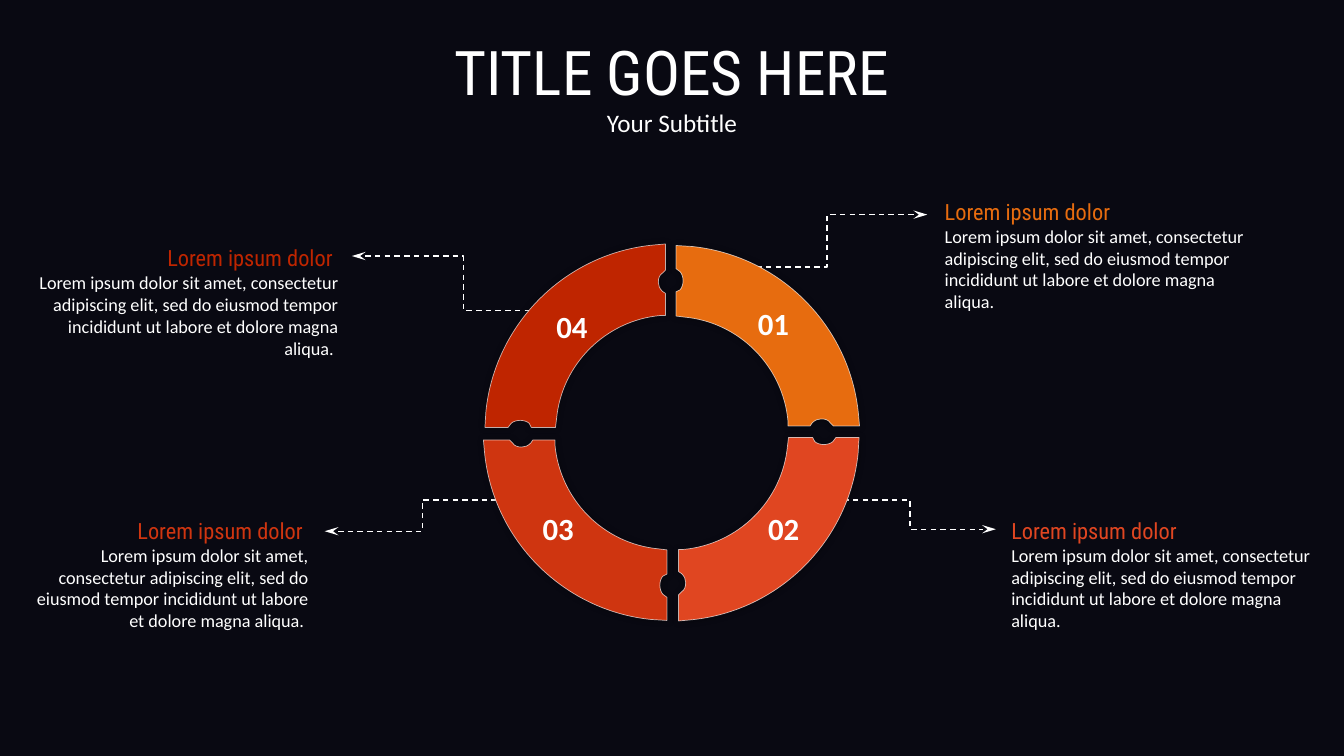
from dataclasses import dataclass

from lxml.etree import SubElement
from pptx import Presentation
from pptx.dml.color import RGBColor
from pptx.enum.dml import MSO_LINE
from pptx.enum.shapes import MSO_CONNECTOR, MSO_SHAPE
from pptx.enum.text import MSO_AUTO_SIZE, PP_ALIGN
from pptx.oxml.ns import qn
from pptx.util import Emu, Inches, Pt

Point = tuple[float, float]
Box = tuple[float, float, float, float]

WIDE, HIGH = Inches(13.33), Inches(7.5)
HEAD_FONT, BODY_FONT = "Roboto Condensed", "Calibri"
HUES = {
    "back": "20213D", "veil": "000000", "text": "FFFFFF",
    "amber": "E76C0F", "coral": "E04621", "rust": "CF3510", "brick": "BF2500",
}
HEAD = "Lorem ipsum dolor"
BODY = ("Lorem ipsum dolor sit amet, consectetur adipiscing elit, "
        "sed do eiusmod tempor incididunt ut labore et dolore magna aliqua.")

# Ring quarter in hundredths of an inch: two values make a line, six a curve.
START = (179, 0)
EDGE = [
    (179, 26), (176, 29), (173, 31, 172, 34, 172, 38), (172, 41, 173, 44, 176, 47),
    (179, 49), (179, 71), (174, 71), (120, 76, 76, 119, 71, 174),
    (70, 182), (46, 182), (44, 178), (42, 176, 38, 175, 35, 175),
    (32, 175, 28, 176, 26, 178), (23, 182), (0, 182), (1, 166),
    (10, 79, 80, 9, 168, 1),
]


@dataclass
class Part:
    """One ring quarter with its note; places are percent of the slide."""
    label: str
    hue: str
    turn: int
    spot: Point
    mark: Point
    note: Box
    link: Box
    left: bool


@dataclass
class Run:
    text: str
    size: float
    font: str
    hue: str = "text"
    bold: bool = False


PARTS = [
    Part("01", "amber", 90, (50.41, 32.27), (55.66, 39.6),
         (69.77, 25.8, 24.68, 16.13), (54.09, 35.33, 69, 28.4), False),
    Part("02", "coral", 180, (50.49, 57.87), (56.41, 66.8),
         (74.72, 68, 24.68, 16.13), (61.29, 66.13, 74.1, 70), False),
    Part("03", "rust", 270, (36.08, 58), (39.64, 66.72),
         (1.16, 68, 22.28, 16.13), (24.16, 70.27, 38.71, 66.13), True),
    Part("04", "brick", 0, (36.08, 32.27), (40.66, 40),
         (0.83, 31.92, 24.83, 16.13), (26.18, 33.87, 42.76, 41.07), True),
]


def tint(name: str) -> RGBColor:
    return RGBColor.from_string(HUES[name])


def place(box: tuple[float, ...]) -> list[Emu]:
    """Turn x, y pairs in percent of the slide into lengths."""
    return [Emu(round(v * (HIGH if i % 2 else WIDE) / 100)) for i, v in enumerate(box)]


def fade(node, share: int) -> None:
    """Make the colour below a fill or line opaque to a share in percent."""
    SubElement(next(node.iter(qn("a:srgbClr"))), qn("a:alpha"), val=str(share * 1000))


def write(shapes, box: Box, runs: list[Run], align: PP_ALIGN,
          pad: Point = (0.1, 0.05), wrap: bool = True) -> None:
    """Add a text box with one paragraph for each run."""
    frame = shapes.add_textbox(*place(box)).text_frame
    frame.word_wrap = wrap
    frame.auto_size = MSO_AUTO_SIZE.SHAPE_TO_FIT_TEXT
    frame.margin_left = frame.margin_right = Inches(pad[0])
    frame.margin_top = frame.margin_bottom = Inches(pad[1])
    for i, item in enumerate(runs):
        para = frame.add_paragraph() if i else frame.paragraphs[0]
        para.alignment = align
        run = para.add_run()
        run.text = item.text
        run.font.size = Pt(item.size)
        run.font.name = item.font
        run.font.bold = item.bold
        run.font.color.rgb = tint(item.hue)


def draw_veil(deck, shapes) -> None:
    """Darken the background with a sheet on the slide master."""
    veil = shapes.add_shape(MSO_SHAPE.RECTANGLE, *place((0, 0, 100, 100)))
    veil.shadow.inherit = False
    veil.line.fill.background()
    veil.fill.solid()
    veil.fill.fore_color.rgb = tint("veil")
    fade(veil.element.spPr, 70)
    veil.element.nvSpPr.cNvPr.set("id", "99")
    deck.slide_master.shapes.element.insert(2, veil.element)


def draw_link(shapes, part: Part) -> None:
    link = shapes.add_connector(MSO_CONNECTOR.ELBOW, *place(part.link))
    link.line.color.rgb = tint("text")
    link.line.width = Pt(1)
    link.line.dash_style = MSO_LINE.DASH
    props = link.element.spPr
    end = "a:headEnd" if part.left else "a:tailEnd"
    SubElement(props.find(qn("a:ln")), qn(end), type="stealth", w="med", len="lg")
    SubElement(props, qn("a:effectLst"))


def draw_note(shapes, part: Part) -> None:
    gap = " " if part.left else ""
    runs = [Run(HEAD + gap, 16, HEAD_FONT, part.hue), Run(BODY + gap, 13, BODY_FONT)]
    align = PP_ALIGN.RIGHT if part.left else PP_ALIGN.LEFT
    write(shapes, part.note, runs, align, (0.07, 0.03))


def bend(shape) -> None:
    """Turn the straight steps that carry six values into curves."""
    lines = list(shape.element.spPr.iter(qn("a:lnTo")))
    for line, step in zip(lines, EDGE):
        if len(step) == 6:
            line.tag = qn("a:cubicBezTo")
            line.remove(line[0])
            for x, y in zip(step[::2], step[1::2]):
                SubElement(line, qn("a:pt"), x=str(x), y=str(y))


def draw_part(shapes, part: Part) -> None:
    group = shapes.add_group_shape().shapes
    pen = group.build_freeform(*START, scale=Inches(0.01))
    pen.add_line_segments([step[-2:] for step in EDGE], close=True)
    shape = pen.convert_to_shape(*place(part.spot))
    bend(shape)
    shape.rotation = part.turn
    shape.fill.solid()
    shape.fill.fore_color.rgb = tint(part.hue)
    shape.line.color.rgb = tint("text")
    shape.line.width = Pt(0.5)
    shape.shadow.inherit = False
    props = shape.element.spPr
    fade(props.find(qn("a:ln")), 65)
    glow = SubElement(props.find(qn("a:effectLst")), qn("a:outerShdw"),
                      blurRad=str(Pt(5)), dist="0", dir="0", algn="ctr", rotWithShape="0")
    SubElement(glow, qn("a:srgbClr"), val=HUES["veil"])
    fade(glow, 40)
    write(group, (*part.mark, 3.9, 6.27), [Run(part.label, 22, BODY_FONT, bold=True)],
          PP_ALIGN.LEFT, wrap=False)


def main() -> None:
    deck = Presentation()
    deck.slide_width, deck.slide_height = WIDE, HIGH
    slide = deck.slides.add_slide(deck.slide_layouts[6])
    slide.background.fill.solid()
    slide.background.fill.fore_color.rgb = tint("back")
    shapes = slide.shapes

    draw_veil(deck, shapes)
    for part in PARTS:
        draw_link(shapes, part)
    title = [Run("TITLE GOES HERE", 44, HEAD_FONT), Run("Your Subtitle", 18, BODY_FONT)]
    write(shapes, (27.43, 3.77, 45.16, 15.2), title, PP_ALIGN.CENTER)
    for part in PARTS:
        draw_note(shapes, part)
    for part in PARTS:
        draw_part(shapes, part)
    deck.save("out.pptx")


if __name__ == "__main__":
    main()
